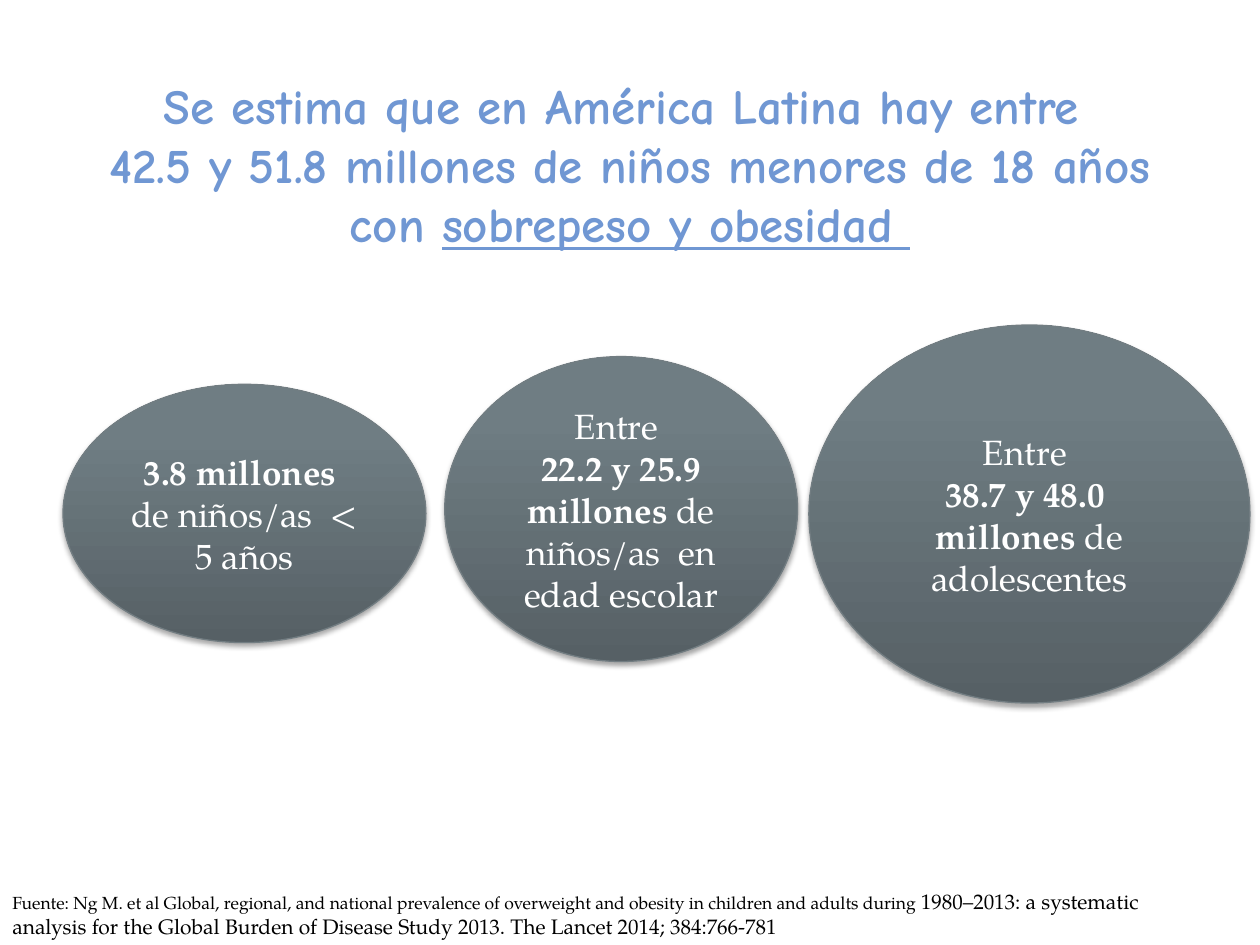
from copy import deepcopy

from lxml import etree
from pptx import Presentation, util as u
from pptx.dml.color import RGBColor
from pptx.enum import shapes, text
from pptx.oxml import ns, parse_xml

WIDTH, HEIGHT = 10, 7.5
SERIF, CASUAL = "TeX Gyre Pagella", "Comic Neue"
GRADIENT = [(0, "566065"), (80, "6F7D83"), (100, "6F7E84")]
DRAWING = 'xmlns:a="http://schemas.openxmlformats.org/drawingml/2006/main"'
GROUPS = [
    ((0.5, 3.05, 2.88, 2.05),
     [[("3.8 millones ", True)], [("de niños/as  < 5 años", False)]]),
    ((3.53, 2.83, 2.8, 2.42),
     [[("Entre ", False)],
      [("22.2 y 25.9 millones", True), (" de niños/as  en edad escolar", False)]]),
    ((6.42, 2.58, 3.5, 3),
     [[("Entre ", False)],
      [("38.7 y 48.0  millones ", True), ("de adolescentes", False)]]),
]


def color(value):
    """Return the colour of a hex string."""
    return RGBColor.from_string(value)


def place(box):
    """Turn a box in inches into lengths."""
    return [u.Inches(length) for length in box]


def style(run, font, size, shade, bold=False, underline=None):
    """Format one run."""
    run.font.name, run.font.size = font, u.Pt(size)
    run.font.bold, run.font.underline = bold, underline
    run.font.color.rgb = color(shade)


def add_styled(paragraph, wording, *look):
    """Append a formatted run to a paragraph."""
    run = paragraph.add_run()
    run.text = wording
    style(run, *look)


def add_title(slide):
    """Fill the title with its underlined ending."""
    title = slide.shapes.title
    title.left, title.top, title.width, title.height = place((0.5, 0.38, 9, 1.67))
    frame = title.text_frame
    frame.text = ("Se estima que en América Latina hay entre \v"
                  "42.5 y 51.8 millones de niños menores de 18 años con ")
    frame.vertical_anchor = text.MSO_ANCHOR.BOTTOM
    frame.auto_size = text.MSO_AUTO_SIZE.NONE
    paragraph = frame.paragraphs[0]
    paragraph.alignment = text.PP_ALIGN.CENTER
    look = (CASUAL, 28, "7097D3", True)
    for run in paragraph.runs:
        style(run, *look)
    line_break = paragraph._p.find(ns.qn("a:br"))
    line_break.insert(0, deepcopy(paragraph.runs[0]._r.rPr))
    add_styled(paragraph, "sobrepeso y obesidad ", *look, True)


def shade_oval(oval):
    """Give an oval its gradient, outline and soft shadow."""
    oval.fill.gradient()
    gradient = oval._element.spPr.find(ns.qn("a:gradFill"))
    stops = "".join(
        f'<a:gs pos="{share * 1000}"><a:srgbClr val="{shade}"/></a:gs>'
        for share, shade in GRADIENT)
    gradient.getparent().replace(gradient, parse_xml(
        f'<a:gradFill {DRAWING} rotWithShape="1"><a:gsLst>{stops}</a:gsLst>'
        '<a:lin ang="16200000" scaled="0"/></a:gradFill>'))
    oval.line.color.rgb = color("727D82")
    oval.line.width = u.Pt(0.75)
    oval.shadow.inherit = False
    effects = oval._element.spPr.find(ns.qn("a:effectLst"))
    shadow = etree.SubElement(
        effects, ns.qn("a:outerShdw"), blurRad=str(u.Pt(3.1)),
        dist=str(u.Pt(1.8)), dir="5400000", rotWithShape="0")
    black = etree.SubElement(shadow, ns.qn("a:srgbClr"), val="000000")
    etree.SubElement(black, ns.qn("a:alpha"), val="35000")


def add_group(slide, box, paragraphs):
    """Add the oval of one age group."""
    oval = slide.shapes.add_shape(shapes.MSO_SHAPE.OVAL, *place(box))
    shade_oval(oval)
    frame = oval.text_frame
    frame.word_wrap = True
    frame.vertical_anchor = text.MSO_ANCHOR.MIDDLE
    for index, pieces in enumerate(paragraphs):
        paragraph = frame.add_paragraph() if index else frame.paragraphs[0]
        paragraph.alignment = text.PP_ALIGN.CENTER
        for wording, bold in pieces:
            add_styled(paragraph, wording, SERIF, 20, "FFFFFF", bold)


def add_citation(slide):
    """Add the reference along the bottom edge."""
    citation = slide.shapes.add_textbox(*place((0, HEIGHT - 0.5, 9.66, 0.5)))
    frame = citation.text_frame
    frame.word_wrap = True
    frame.auto_size = text.MSO_AUTO_SIZE.SHAPE_TO_FIT_TEXT
    paragraph = frame.paragraphs[0]
    add_styled(paragraph, "Fuente: Ng M. et al Global, regional, and national prevalence of "
               "overweight and obesity in children and adults during",
               SERIF, 10, "000000")
    add_styled(paragraph, " 1980–2013: a systematic analysis for the Global Burden of "
               "Disease Study 2013. The Lancet 2014; 384:766-781",
               SERIF, 12, "000000")


def main():
    """Build and save the slide."""
    deck = Presentation()
    deck.slide_width, deck.slide_height = place((WIDTH, HEIGHT))
    slide = deck.slides.add_slide(deck.slide_layouts.get_by_name("Title Only"))
    add_title(slide)
    for box, paragraphs in GROUPS:
        add_group(slide, box, paragraphs)
    add_citation(slide)
    deck.save("out.pptx")


if __name__ == "__main__":
    main()
